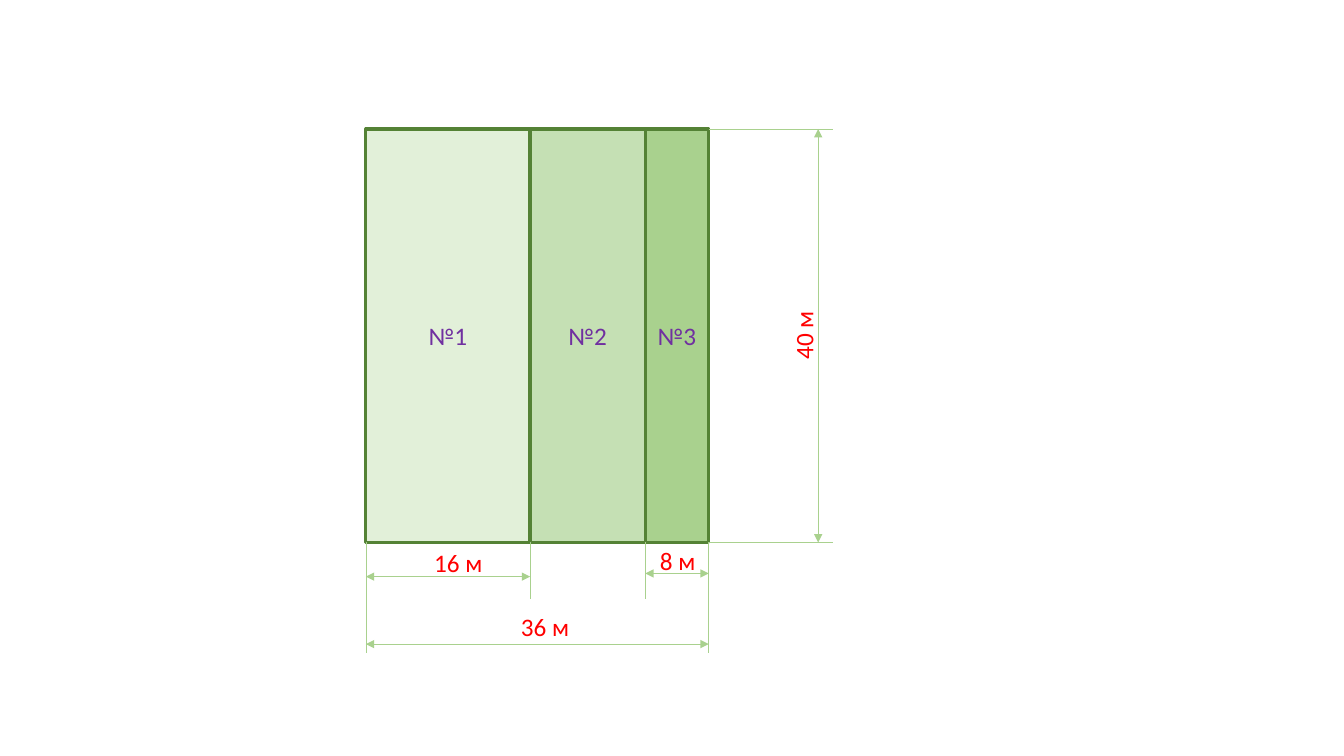
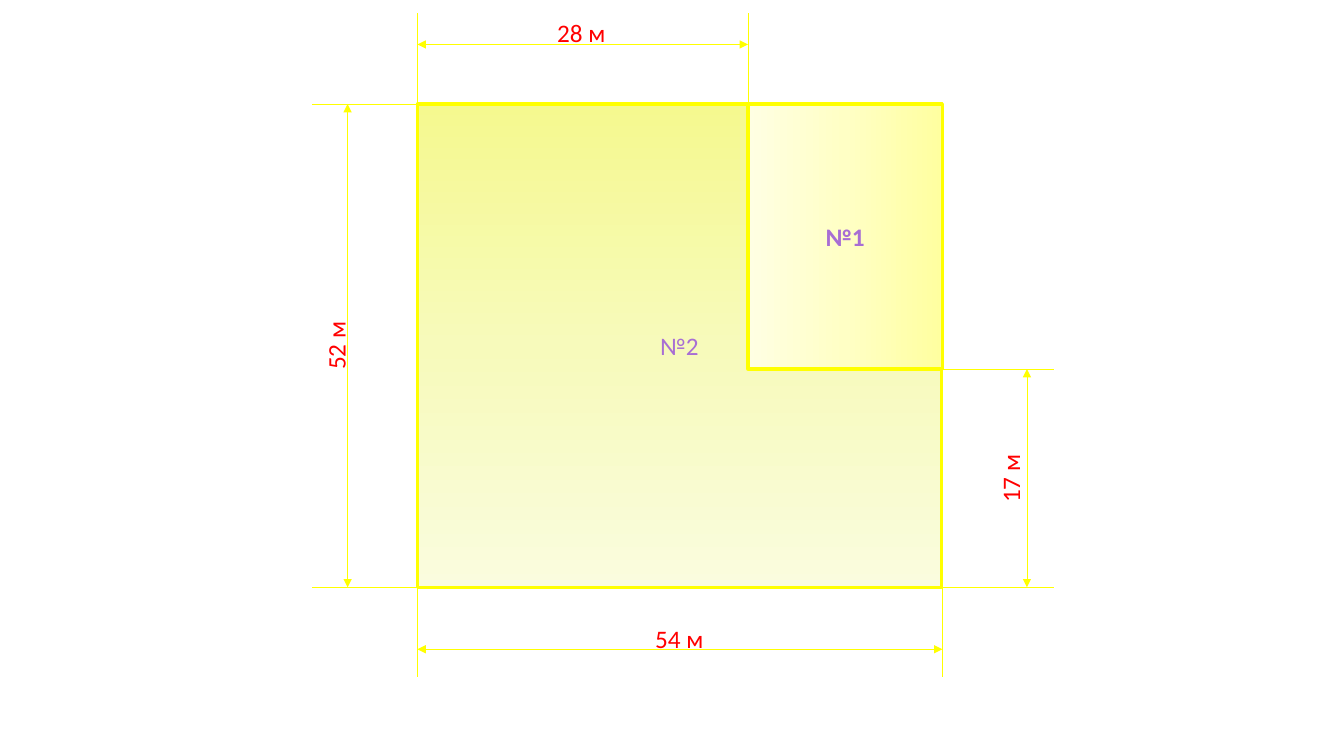
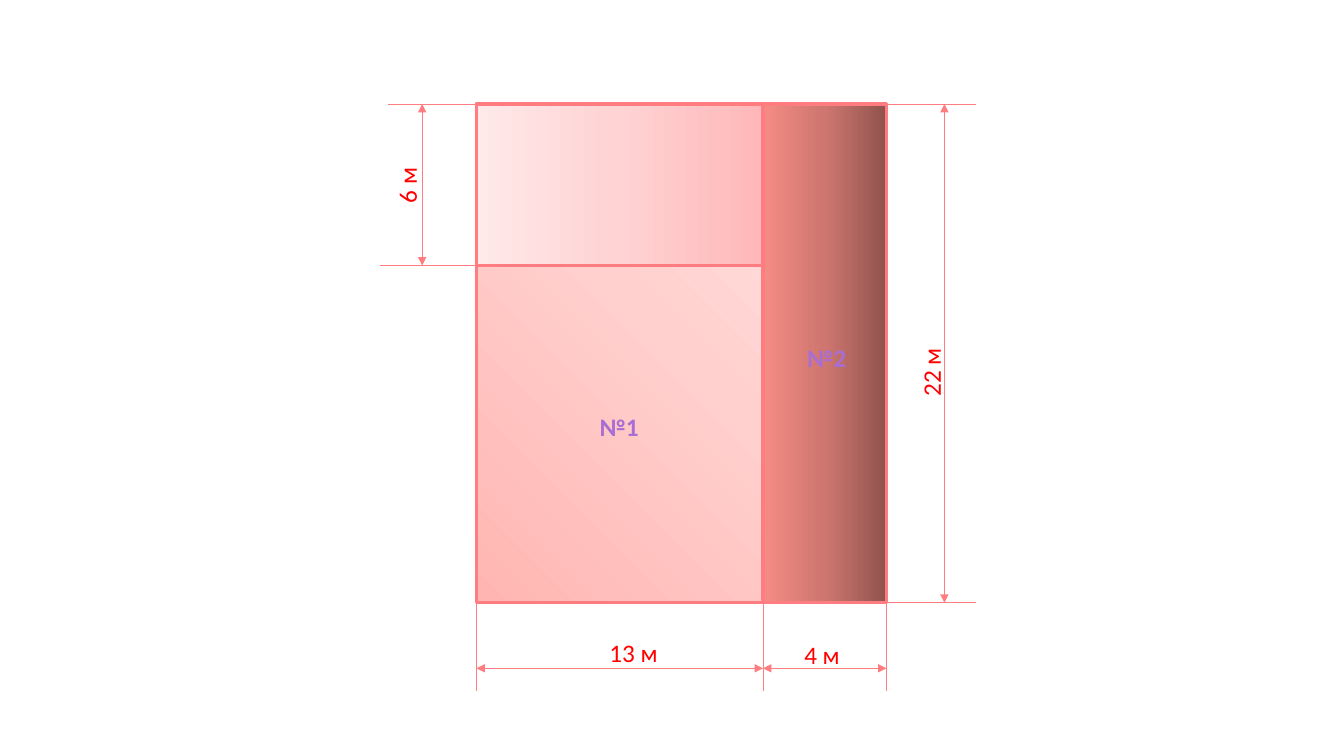
from lxml import etree
from pptx import Presentation
from pptx.dml.color import RGBColor
from pptx.enum import shapes, text
from pptx.oxml import parse_xml
from pptx.oxml.ns import nsdecls, qn
from pptx.util import Cm, Pt

COLORS = {
    "dimension": "FF0000",
    "violet": "7030A0",
    "lilac": "A86ED4",
    "dark green": "548235",
    "green": "A9D18E",
    "mid green": "C5E0B4",
    "pale green": "E2F0D9",
    "yellow": "FFFF00",
    "pink": "FF7C80",
}
GRADIENTS = {
    "large yellow": ("F5F98F", "F7FABB", "FAFCDE"),
    "small yellow": ("FFFFA0", "FFFFC5", "FFFFE3"),
    "coral": ("FFB6B2", "FFD0CE", "FFE8E6"),
    "brown": ("91534E", "CE766F", "F48C84"),
    "rose": ("FFB7B9", "FFD2D3", "FFE9E9"),
}
DOWN = '<a:lin ang="5400000" scaled="0"/>'
LEFTWARD = '<a:lin ang="10800000" scaled="0"/>'
FROM_CORNER = '<a:path path="circle"><a:fillToRect t="100000" r="100000"/></a:path>'
LABEL_HEIGHT = 1.03


def fill_gradient(box, stops, direction):
    """Fill with three even colour stops; direction is the shading element."""
    stop_xml = "".join(
        f'<a:gs pos="{50000 * index}"><a:srgbClr val="{color}"/></a:gs>'
        for index, color in enumerate(stops))
    box.fill.gradient()
    properties = box._element.spPr
    properties.replace(properties.find(qn("a:gradFill")), parse_xml(
        f'<a:gradFill rotWithShape="1" {nsdecls("a")}>'
        f"<a:gsLst>{stop_xml}</a:gsLst>{direction}</a:gradFill>"))


def write_text(frame, words, color, bold=False):
    frame.text = words
    para = frame.paragraphs[0]
    para.font.name = "Calibri"
    para.font.size = Pt(18)
    para.font.bold = bold
    para.font.color.rgb = RGBColor.from_string(COLORS[color])
    return para


# Lengths are centimetres.
# plots: left, top, right, bottom, fill, shading, name, name colour, bold
# extensions and dimensions: x and y of both ends
# labels: left, top, width, turned, words; names: left, top, width, words

# Three strips side by side
left, first, second, right = 9.22, 13.36, 16.26, 17.86
top, bottom = 3.25, 13.67
strips = {
    "outline": "dark green", "rule": "green", "wrap": False,
    "plots": [
        (left, top, first, bottom, "pale green", None, "№1", "violet", False),
        (first, top, second, bottom, "mid green", None, "№2", "violet", False),
        (second, top, right, bottom, "green", None, "№3", "violet", False),
    ],
    "extensions": [(x, bottom, x, 16.46) for x in (left, right)]
    + [(x, bottom, x, 15.09) for x in (first, second)]
    + [(right, y, 20.98, y) for y in (bottom, top)],
    "dimensions": [
        (second, 14.45, right, 14.45),
        (left, 14.53, first, 14.53),
        (right, 16.23, left, 16.23),
        (20.62, bottom, 20.62, top),
    ],
    "labels": [
        (10.69, 13.67, 1.75, False, "16 м"),
        (16.38, 13.61, 1.42, False, "8 м"),
        (12.88, 15.29, 1.75, False, "36 м"),
        (19.38, 7.92, 1.75, True, "40 м"),
    ],
    "names": [],
}

# A small plot in the corner of a large one
left, split, right = 10.52, 18.85, 23.75
top, middle, bottom = 2.62, 9.3, 14.8
corner = {
    "outline": "yellow", "rule": "yellow", "wrap": False,
    "plots": [
        (left, top, 23.72, bottom, "large yellow", DOWN, "№2", "lilac", False),
        (split, top, right, middle, "small yellow", LEFTWARD, "№1", "lilac", True),
    ],
    "extensions": [(x, 0.33, x, top) for x in (left, split)]
    + [(7.87, y, 10.69, y) for y in (top, bottom)]
    + [(x, bottom, x, 17.07) for x in (left, right)]
    + [(right, y, 26.57, y) for y in (middle, bottom)],
    "dimensions": [
        (left, 1.12, split, 1.12),
        (8.76, top, 8.76, bottom),
        (left, 16.36, right, 16.36),
        (25.88, middle, 25.88, bottom),
    ],
    "labels": [
        (13.79, 0.3, 1.75, False, "28 м"),
        (7.59, 8.18, 1.75, True, "52 м"),
        (16.26, 15.57, 1.75, False, "54 м"),
        (24.59, 11.53, 1.75, True, "17 м"),
    ],
    "names": [],
}

# A plot with a strip above and a strip to the right
left, split, right = 12.01, 19.23, 22.34
top, shelf, bottom = 2.62, 6.69, 15.19
borders = {
    "outline": "pink", "rule": "pink", "wrap": True,
    "plots": [
        (left, top, right, bottom, "coral", FROM_CORNER, "", "lilac", True),
        (split, top, right, bottom, "brown", LEFTWARD, "", "lilac", True),
        (left, top, split, shelf, "rose", LEFTWARD, "", "lilac", True),
    ],
    "extensions": [(x, bottom, x, 17.42) for x in (left, split, right)]
    + [(24.59, y, right, y) for y in (top, bottom)]
    + [(left, top, 9.78, top), (left, shelf, 9.58, shelf)],
    "dimensions": [
        (10.64, top, 10.64, shelf),
        (23.8, top, 23.8, bottom),
        (left, 16.84, split, 16.84),
        (split, 16.84, right, 16.84),
    ],
    "labels": [
        (9.55, 4.14, 1.42, True, "6 м"),
        (15.11, 15.93, 2.39, False, "13 м"),
        (20.02, 15.98, 1.52, False, "4 м"),
        (22.12, 8.38, 2.69, True, "22 м"),
    ],
    "names": [(14.86, 10.24, 2.18, "№1"), (20.09, 8.51, 1.63, "№2")],
}

deck = Presentation()
deck.slide_width, deck.slide_height = Cm(33.87), Cm(19.05)
blank = deck.slide_layouts[6]

for plan in (strips, corner, borders):
    page = deck.slides.add_slide(blank)

    for x1, y1, x2, y2, fill, shading, name, color, bold in plan["plots"]:
        plot = page.shapes.add_shape(
            shapes.MSO_SHAPE.RECTANGLE, Cm(x1), Cm(y1), Cm(x2 - x1), Cm(y2 - y1))
        plot.shadow.inherit = False
        if shading:
            fill_gradient(plot, GRADIENTS[fill], shading)
        else:
            plot.fill.solid()
            plot.fill.fore_color.rgb = RGBColor.from_string(COLORS[fill])
        plot.line.color.rgb = RGBColor.from_string(COLORS[plan["outline"]])
        plot.line.width = Pt(2.25)
        if name:
            para = write_text(plot.text_frame, name, color, bold)
            para.alignment = text.PP_ALIGN.CENTER
            plot.text_frame.vertical_anchor = text.MSO_ANCHOR.MIDDLE

    for kind in ("extensions", "dimensions"):
        for ends in plan[kind]:
            rule = page.shapes.add_connector(
                shapes.MSO_CONNECTOR.STRAIGHT, *[Cm(value) for value in ends])
            rule.line.color.rgb = RGBColor.from_string(COLORS[plan["rule"]])
            rule.line.width = Pt(0.5)
            etree.SubElement(rule._element.spPr, qn("a:effectLst"))
            if kind == "dimensions":
                for end in ("a:headEnd", "a:tailEnd"):
                    etree.SubElement(
                        rule.line._get_or_add_ln(), qn(end), type="triangle")

    captions = [(*label, "dimension", False) for label in plan["labels"]]
    captions += [(x, y, width, False, words, "lilac", True)
                 for x, y, width, words in plan["names"]]
    for x, y, width, turned, words, color, bold in captions:
        box = page.shapes.add_textbox(Cm(x), Cm(y), Cm(width), Cm(LABEL_HEIGHT))
        box.rotation = 270 if turned else 0
        box.text_frame.word_wrap = plan["wrap"]
        box.text_frame.auto_size = text.MSO_AUTO_SIZE.SHAPE_TO_FIT_TEXT
        write_text(box.text_frame, words, color, bold)

deck.save("out.pptx")
